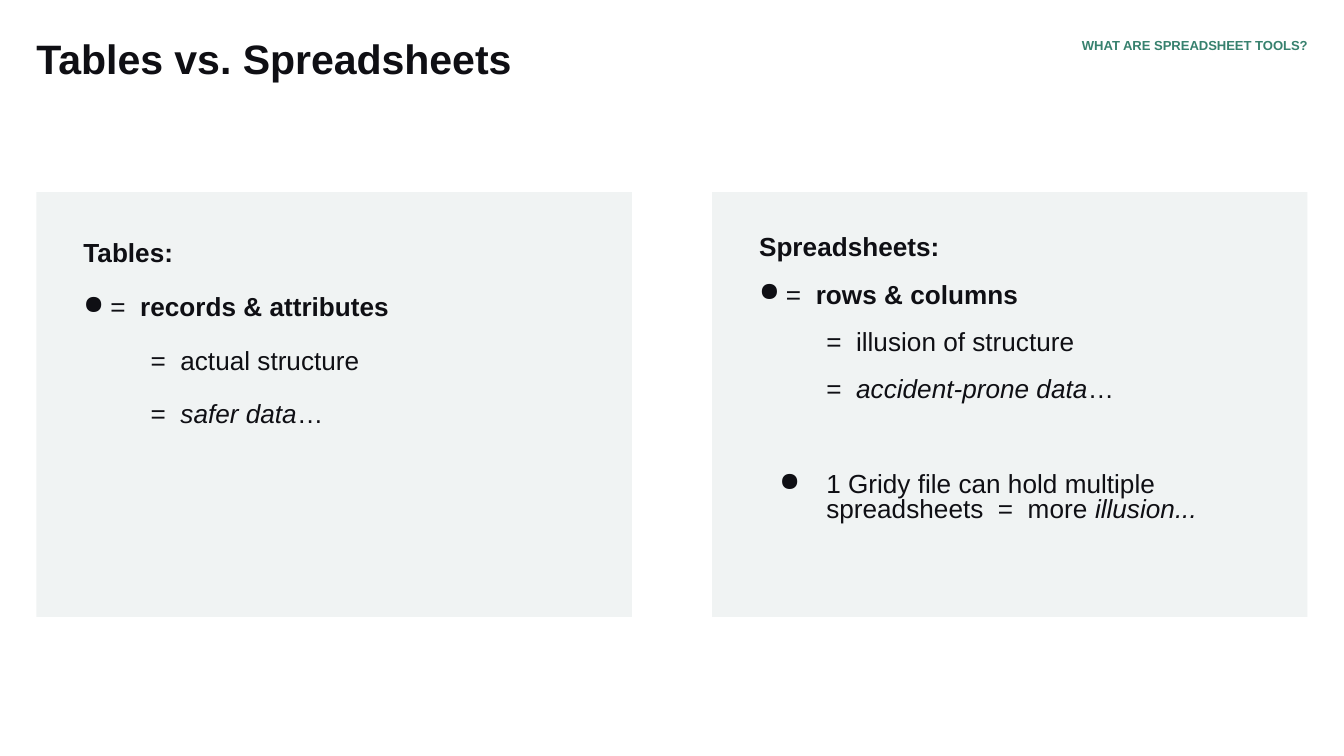
from lxml import etree
from pptx import Presentation
from pptx.dml.color import RGBColor
from pptx.enum.shapes import MSO_SHAPE
from pptx.enum.text import PP_ALIGN
from pptx.oxml.ns import qn
from pptx.util import Pt

RECT = MSO_SHAPE.RECTANGLE
LEFT, RIGHT = PP_ALIGN.LEFT, PP_ALIGN.RIGHT
FONT = "Arial"
COLORS = {"ink": "0F0F14", "panel": "F0F3F3", "accent": "37816E"}
SLIDE_W, SLIDE_H = 720, 405
MARGIN = 19.5
PANEL_W, PANEL_H, PANEL_TOP = 319, 227.5, 103
BODY_X, BODY_Y, BODY_W = 25.2, 16.5, 268


def rgb(name):
    return RGBColor.from_string(COLORS[name])


def add_box(slide, x, y, w, h, insets):
    sp = slide.shapes.add_textbox(Pt(x), Pt(y), Pt(w), Pt(h))
    tf = sp.text_frame
    tf.word_wrap = True
    tf.margin_left, tf.margin_top, tf.margin_right, tf.margin_bottom = map(Pt, insets)
    return tf


def add_bullet(p):
    pPr = p._p.get_or_add_pPr()
    clr = etree.SubElement(pPr, qn("a:buClr"))
    etree.SubElement(clr, qn("a:srgbClr")).set("val", COLORS["ink"])
    etree.SubElement(pPr, qn("a:buChar")).set("char", "●")


def add_runs(p, runs, size=14, color="ink", align=LEFT, spacing=None,
             before=0, margin=0, indent=0, bullet=False):
    p.alignment = align
    if spacing:
        p.line_spacing = spacing
    if before:
        p.space_before = Pt(before)
    pPr = p._p.get_or_add_pPr()
    pPr.set("marL", str(Pt(margin)))
    pPr.set("indent", str(Pt(indent)))
    if bullet:
        add_bullet(p)
    for text, style in runs:
        r = p.add_run()
        r.text = text
        r.font.name = FONT
        r.font.size = Pt(size)
        r.font.bold = style == "bold"
        r.font.italic = style == "italic"
        r.font.color.rgb = rgb(color)


def add_header(slide, x, y, w):
    title = add_box(slide, x, y, 575, 42.5, (0, 0, 7.2, 7.2))
    add_runs(title.paragraphs[0], [("Tables vs. Spreadsheets", "bold")],
             size=22, spacing=0.9)
    tag_w = 153.5
    tag = add_box(slide, x + w - tag_w, y, tag_w, 11.5, (0, 0, 0, 7.2))
    add_runs(tag.paragraphs[0], [("WHAT ARE SPREADSHEET TOOLS?", "bold")],
             size=7, color="accent", align=RIGHT, spacing=0.9)


def add_panel(slide, x, y, w, h, heading, points, spacing=None):
    sp = slide.shapes.add_shape(RECT, Pt(x), Pt(y), Pt(w), Pt(h))
    sp.shadow.inherit = False
    sp.fill.solid()
    sp.fill.fore_color.rgb = rgb("panel")
    sp.line.fill.background()
    tf = add_box(slide, x + BODY_X, y + BODY_Y, BODY_W, h - 2 * BODY_Y,
                 (0, 7.2, 7.2, 7.2))
    add_runs(tf.paragraphs[0], [(heading, "bold")], spacing=spacing)
    for runs, layout in points:
        add_runs(tf.add_paragraph(), runs, spacing=spacing, **layout)


def main():
    prs = Presentation()
    prs.slide_width, prs.slide_height = Pt(SLIDE_W), Pt(SLIDE_H)
    slide = prs.slides.add_slide(prs.slide_layouts[6])
    first = dict(before=12, margin=14.4, indent=-14.4, bullet=True)
    nested = dict(before=12, margin=36)
    aside = dict(before=37.4, margin=36, indent=-25.2, bullet=True)

    add_header(slide, MARGIN, 21, SLIDE_W - 2 * MARGIN)
    add_panel(slide, MARGIN, PANEL_TOP, PANEL_W, PANEL_H, "Tables:", [
        ([("=  ", ""), ("records & attributes", "bold")], first),
        ([("=  actual structure", "")], nested),
        ([("=  ", ""), ("safer data", "italic"), ("…", "")], nested),
    ])
    add_panel(slide, SLIDE_W - MARGIN - PANEL_W, PANEL_TOP, PANEL_W, PANEL_H,
              "Spreadsheets:", [
        ([("=  ", ""), ("rows & columns", "bold")], first),
        ([("=  illusion of structure", "")], nested),
        ([("=  ", ""), ("accident-prone data", "italic"), ("…", "")], nested),
        ([("1 Gridy file can hold multiple spreadsheets  =  more ", ""),
          ("illusion...", "italic")], aside),
    ], spacing=0.8)
    prs.save("out.pptx")


if __name__ == "__main__":
    main()
